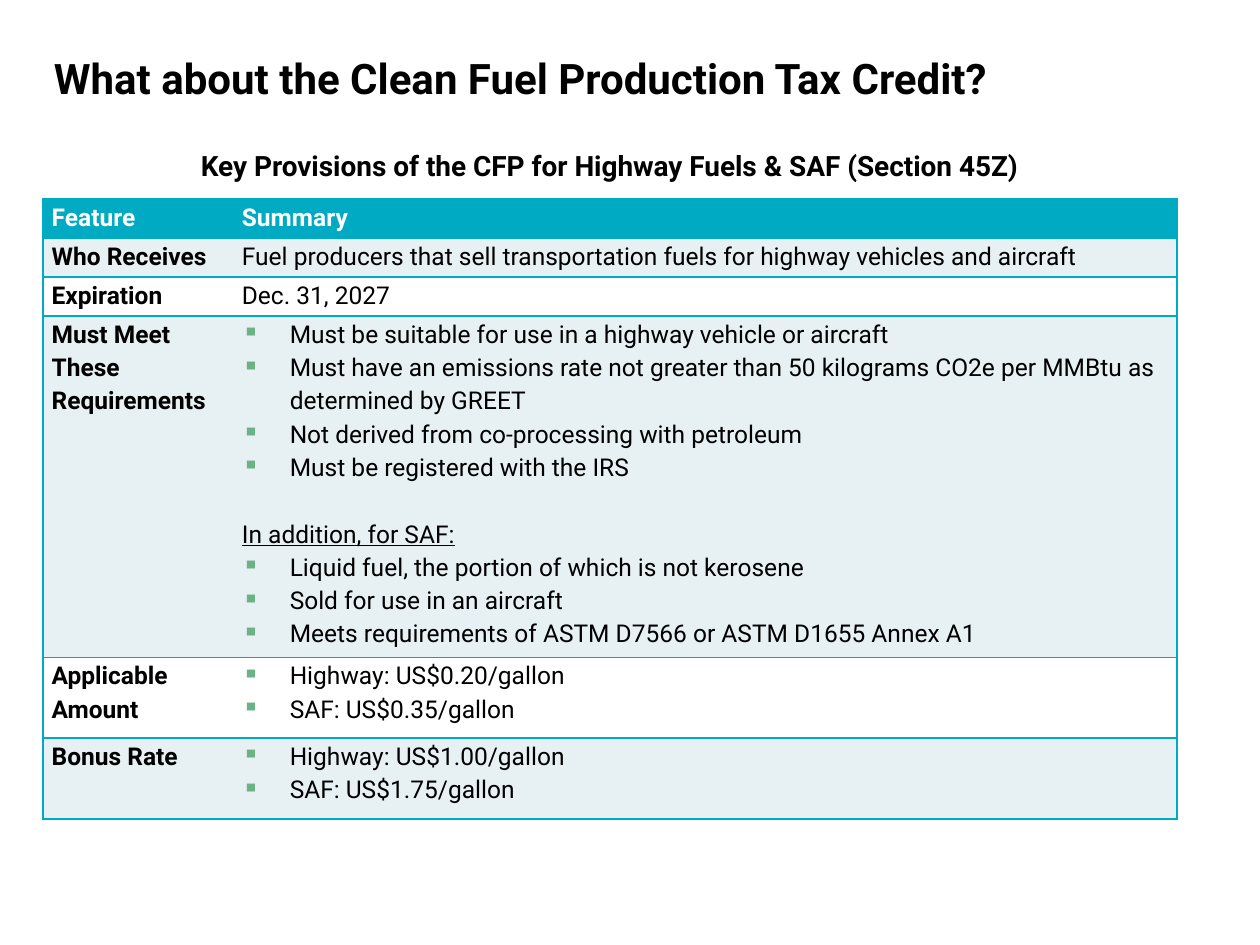
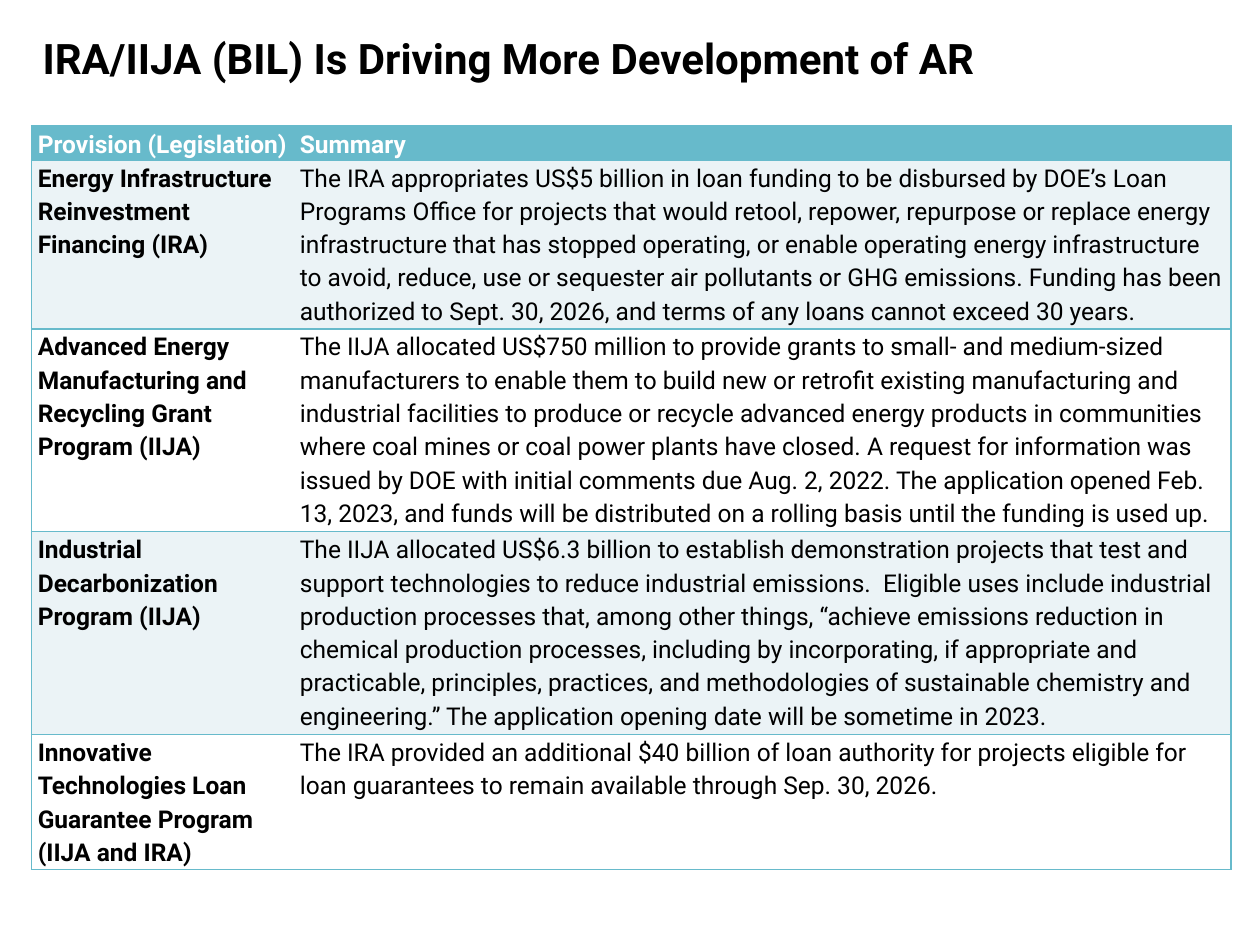
from dataclasses import dataclass

from lxml import etree
from pptx import Presentation
from pptx.dml.color import RGBColor
from pptx.enum.text import MSO_ANCHOR, PP_ALIGN
from pptx.oxml.ns import qn
from pptx.util import Inches, Pt

MIDDLE, TOP = MSO_ANCHOR.MIDDLE, MSO_ANCHOR.TOP
LEFT, CENTER = PP_ALIGN.LEFT, PP_ALIGN.CENTER
BLANK_LAYOUT = 6


@dataclass(frozen=True)
class Theme:
    """Colours and type sizes shared by the slides."""
    font: str = "Roboto"
    ink: str = "000000"
    paper: str = "FFFFFF"
    bullet: str = "6BB284"
    title_size: int = 24
    subtitle_size: int = 16
    body_size: int = 14
    line_spacing: float = 1.15
    body_line: int = 19
    border_width: float = 1


@dataclass(frozen=True)
class TableLook:
    """Accent colour, band colour and side margin of one table."""
    accent: str
    band: str
    margin: float


THEME = Theme()
CREDIT_LOOK = TableLook("00AAC2", "E7F1F4", 0.07)
FUNDING_LOOK = TableLook("67BACB", "EBF3F6", 0.05)


@dataclass(frozen=True)
class Line:
    """A paragraph that is bulleted or underlined, with a gap above it."""
    text: str
    bullet: bool = False
    underline: bool = False
    gap: int = 0


def bullets(*texts):
    """Return bulleted lines."""
    return [Line(text, bullet=True) for text in texts]


CREDIT_ROWS = [
    ("Feature", "Summary"),
    ("Who Receives",
     "Fuel producers that sell transportation fuels for highway vehicles and aircraft"),
    ("Expiration", "Dec. 31, 2027"),
    ("Must Meet These Requirements", [
        *bullets(
            "Must be suitable for use in a highway vehicle or aircraft",
            "Must have an emissions rate not greater than 50 kilograms CO2e per MMBtu "
            "as determined by GREET",
            "Not derived from co-processing with petroleum",
            "Must be registered with the IRS"),
        Line("In addition, for SAF:", underline=True, gap=THEME.body_line),
        *bullets(
            "Liquid fuel, the portion of which is not kerosene",
            "Sold for use in an aircraft",
            "Meets requirements of ASTM D7566 or ASTM D1655 Annex A1")]),
    ("Applicable Amount", bullets("Highway: US$0.20/gallon", "SAF: US$0.35/gallon")),
    ("Bonus Rate", bullets("Highway: US$1.00/gallon", "SAF: US$1.75/gallon")),
]

FUNDING_ROWS = [
    ("Provision (Legislation)", "Summary"),
    ("Energy Infrastructure Reinvestment Financing (IRA)",
     "The IRA appropriates US$5 billion in loan funding to be disbursed by DOE’s Loan "
     "Programs Office for projects that would retool, repower, repurpose or replace energy "
     "infrastructure that has stopped operating, or enable operating energy infrastructure "
     "to avoid, reduce, use or sequester air pollutants or GHG emissions. Funding has been "
     "authorized to Sept. 30, 2026, and terms of any loans cannot exceed 30 years."),
    ("Advanced Energy Manufacturing and Recycling Grant Program (IIJA)",
     "The IIJA allocated US$750 million to provide grants to small- and medium-sized "
     "manufacturers to enable them to build new or retrofit existing manufacturing and "
     "industrial facilities to produce or recycle advanced energy products in communities "
     "where coal mines or coal power plants have closed. A request for information was "
     "issued by DOE with initial comments due Aug. 2, 2022. The application opened Feb. "
     "13, 2023, and funds will be distributed on a rolling basis until the funding is used up."),
    ("Industrial Decarbonization Program (IIJA)",
     "The IIJA allocated US$6.3 billion to establish demonstration projects that test and "
     "support technologies to reduce industrial emissions.  Eligible uses include industrial "
     "production processes that, among other things, “achieve emissions reduction in "
     "chemical production processes, including by incorporating, if appropriate and "
     "practicable, principles, practices, and methodologies of sustainable chemistry and "
     "engineering.” The application opening date will be sometime in 2023."),
    ("Innovative Technologies Loan Guarantee Program (IIJA and IRA)",
     "The IRA provided an additional $40 billion of loan authority for projects eligible for "
     "loan guarantees to remain available through Sep. 30, 2026."),
]


def add_solid_fill(parent, color):
    """Append a solid colour to a drawing element."""
    fill = etree.SubElement(parent, qn("a:solidFill"))
    etree.SubElement(fill, qn("a:srgbClr"), val=color)


def add_bullet(paragraph):
    """Give a paragraph a small square bullet with a hanging indent."""
    properties = paragraph._p.get_or_add_pPr()
    properties.set("marL", str(Inches(0.38)))
    properties.set("indent", str(-Inches(0.38)))
    color = etree.SubElement(properties, qn("a:buClr"))
    etree.SubElement(color, qn("a:srgbClr"), val=THEME.bullet)
    etree.SubElement(properties, qn("a:buChar"), char="▪")


def write_text(frame, content, size=THEME.body_size, color=THEME.ink, bold=False,
               align=LEFT, spacing=1.0):
    """Fill a text frame with a string or a list of lines."""
    frame.word_wrap = True
    lines = [Line(content)] if isinstance(content, str) else content
    for index, line in enumerate(lines):
        paragraph = frame.add_paragraph() if index else frame.paragraphs[0]
        if line.bullet:
            add_bullet(paragraph)
        paragraph.alignment = align
        paragraph.line_spacing = spacing
        if line.gap:
            paragraph.space_before = Pt(line.gap)
        run = paragraph.add_run()
        run.text = line.text
        run.font.name = THEME.font
        run.font.size = Pt(size)
        run.font.bold = bold
        run.font.underline = line.underline
        run.font.color.rgb = RGBColor.from_string(color)


def add_heading(slide, box, text, size, anchor=MIDDLE, align=LEFT):
    """Place a bold heading in a box."""
    frame = slide.shapes.add_textbox(*map(Inches, box)).text_frame
    frame.vertical_anchor = anchor
    write_text(frame, text, size=size, bold=True, align=align)


def set_borders(cell, color, sides):
    """Draw the named sides of a cell and hide the others."""
    properties = cell._tc.get_or_add_tcPr()
    for index, side in enumerate("LRTB"):
        border = etree.Element(qn(f"a:ln{side}"), w=str(Pt(THEME.border_width)))
        if side in sides:
            add_solid_fill(border, color)
        else:
            etree.SubElement(border, qn("a:noFill"))
        properties.insert(index, border)


def style_cell(cell, content, row, column, look):
    """Write and colour one cell of a provision table."""
    cell.margin_left = cell.margin_right = Inches(look.margin)
    cell.margin_top = cell.margin_bottom = 0
    header = row == 0
    background = look.accent if header else look.band if row % 2 else THEME.paper
    cell.fill.solid()
    cell.fill.fore_color.rgb = RGBColor.from_string(background)
    set_borders(cell, look.accent, "RTB" if column else "LTB")
    write_text(cell.text_frame, content, color=THEME.paper if header else THEME.ink,
               bold=header or column == 0, spacing=THEME.line_spacing)


def add_provision_table(slide, box, rows, widths, heights, look):
    """Place a banded table of provisions and their summaries."""
    table = slide.shapes.add_table(len(rows), len(widths), *map(Inches, box)).table
    table.first_row = table.horz_banding = False
    for column, width in zip(table.columns, widths):
        column.width = Inches(width)
    for row, (entries, height) in enumerate(zip(rows, heights)):
        table.rows[row].height = Inches(height)
        for column, content in enumerate(entries):
            style_cell(table.cell(row, column), content, row, column, look)


def build_credit_slide(slide):
    """Build the tax credit slide."""
    left, width = 0.34, 9
    add_heading(slide, (0.33, 0.18, 9.52, 0.87),
                "What about the Clean Fuel Production Tax Credit?", THEME.title_size)
    add_provision_table(slide, (left, 1.58, width, 4.93), CREDIT_ROWS, (1.51, 7.49),
                        (0.31, 0.31, 0.31, 2.71, 0.64, 0.64), CREDIT_LOOK)
    add_heading(slide, (left, 1.13, width, 0.37),
                "Key Provisions of the CFP for Highway Fuels & SAF (Section 45Z)",
                THEME.subtitle_size, anchor=TOP, align=CENTER)


def build_funding_slide(slide):
    """Build the slide on development funding."""
    width = 9.52
    add_heading(slide, (0.24, 0.17, width, 0.57),
                "IRA/IIJA (BIL) Is Driving More Development of AR", THEME.title_size)
    add_provision_table(slide, (0.25, 1, width, 5.81), FUNDING_ROWS, (2.08, 7.44),
                        (0.26, 1.32, 1.58, 1.58, 1.06), FUNDING_LOOK)


def main():
    """Build and save the presentation."""
    deck = Presentation()
    deck.slide_width, deck.slide_height = Inches(10), Inches(7.5)
    for build in (build_credit_slide, build_funding_slide):
        build(deck.slides.add_slide(deck.slide_layouts[BLANK_LAYOUT]))
    deck.save("out.pptx")


if __name__ == "__main__":
    main()
